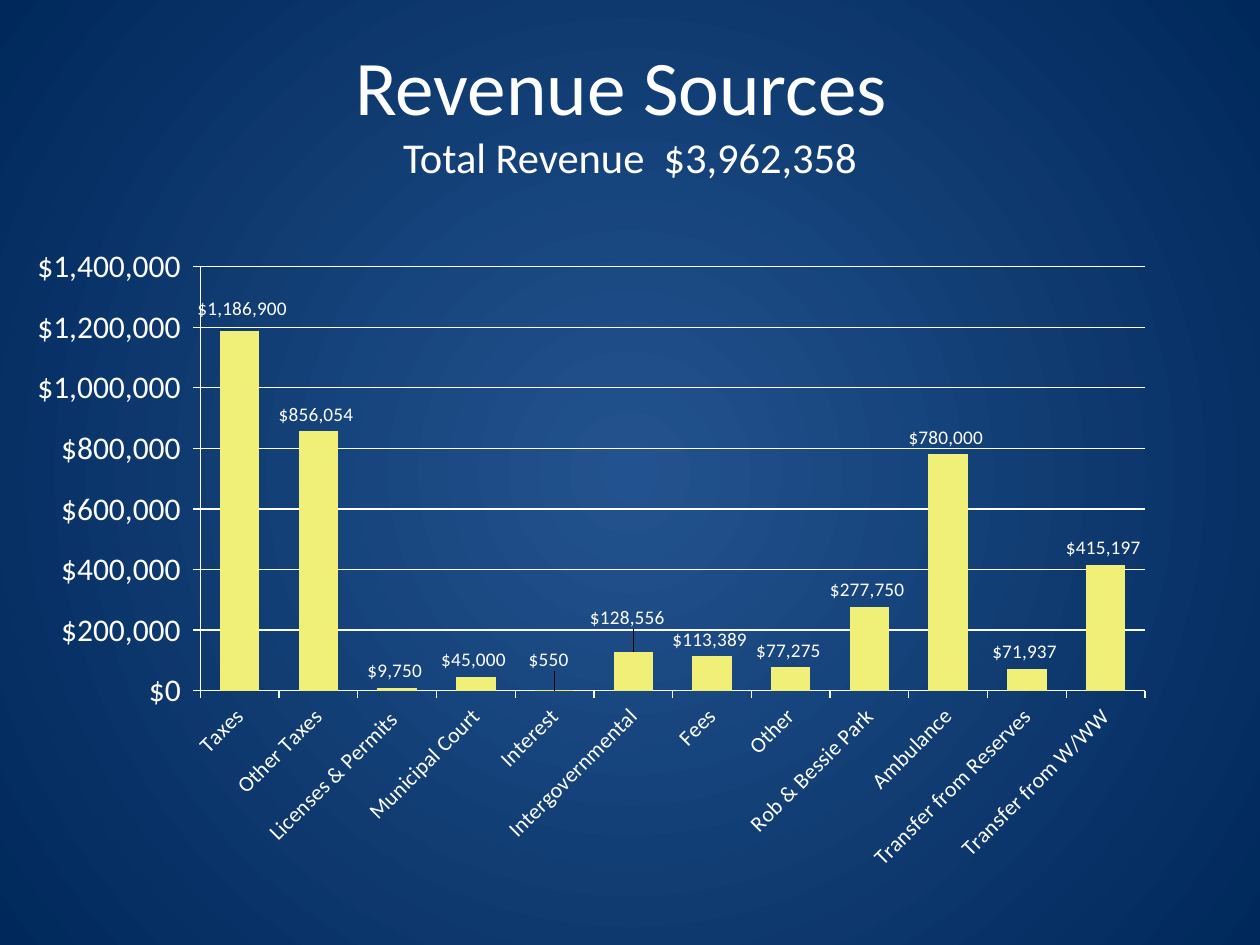
from lxml import etree
from pptx import Presentation
from pptx.chart.data import CategoryChartData
from pptx.dml.color import RGBColor
from pptx.enum.chart import XL_CHART_TYPE, XL_LABEL_POSITION, XL_TICK_MARK
from pptx.enum.text import MSO_ANCHOR, PP_ALIGN
from pptx.oxml import parse_xml
from pptx.oxml.ns import nsdecls, qn
from pptx.util import Inches, Pt

COLUMNS = XL_CHART_TYPE.COLUMN_CLUSTERED
ABOVE = XL_LABEL_POSITION.OUTSIDE_END
TICK_OUT = XL_TICK_MARK.OUTSIDE
TICK_NONE = XL_TICK_MARK.NONE
MIDDLE = MSO_ANCHOR.MIDDLE
CENTER = PP_ALIGN.CENTER

WHITE = RGBColor(0xFF, 0xFF, 0xFF)
YELLOW = RGBColor(0xF0, 0xF0, 0x78)
GLOW_BLUE = RGBColor(0x23, 0x53, 0x8E)
DEEP_BLUE = RGBColor(0x00, 0x28, 0x5B)
FONT = "Calibri"
DOLLARS = '"$"#,##0_);[Red]\\("$"#,##0\\)'

HEADING = [("Revenue Sources ", 44.1), ("Total Revenue  $3,962,358", 24.3)]
REVENUE = [
    ("Taxes", 1186900),
    ("Other Taxes", 856054),
    ("Licenses & Permits ", 9750),
    ("Municipal Court", 45000),
    ("Interest", 550),
    ("Intergovernmental", 128556),
    ("Fees", 113389),
    ("Other", 77275),
    ("Rob & Bessie Park", 277750),
    ("Ambulance", 780000),
    ("Transfer from Reserves", 71937),
    ("Transfer from W/WW", 415197),
]
# Labels moved off their bar, as fractions of the chart: index -> (x, y)
LABEL_SHIFTS = {0: (0.004, -0.008), 4: (-0.003, -0.021), 5: (-0.003, -0.026)}
PLOT_AREA = {"x": 0.161, "y": 0.071, "w": 0.769, "h": 0.651}


def style_font(font, size):
    font.name = FONT
    font.size = Pt(size)
    font.bold = False
    font.color.rgb = WHITE


def manual_layout(fractions, inner=False):
    layout = parse_xml(f"<c:layout {nsdecls('c')}><c:manualLayout/></c:layout>")
    settings = dict(fractions)
    if inner:
        settings = {"layoutTarget": "inner", "xMode": "edge", "yMode": "edge", **settings}
    for name, value in settings.items():
        etree.SubElement(layout[0], qn(f"c:{name}")).set("val", str(value))
    return layout


def paint_background(page):
    """Radial gradient, light in the centre."""
    fill = page.background.fill
    fill.gradient()
    for stop, color, position in zip(fill.gradient_stops, (GLOW_BLUE, DEEP_BLUE), (0, 1)):
        stop.color.rgb = color
        stop.position = position
    linear = next(page.background._cSld.iter(qn("a:lin")))
    radial = parse_xml(
        f'<a:path {nsdecls("a")} path="circle">'
        '<a:fillToRect l="50000" t="50000" r="50000" b="50000"/></a:path>'
    )
    linear.getparent().replace(linear, radial)


def add_heading(page):
    box = page.shapes.add_textbox(Inches(0.5), Inches(0.25), Inches(9), Inches(1.25))
    frame = box.text_frame
    frame.word_wrap = True
    frame.vertical_anchor = MIDDLE
    para = frame.paragraphs[0]
    para.alignment = CENTER
    for index, (text, size) in enumerate(HEADING):
        if index:
            para.add_line_break()
        span = para.add_run()
        span.text = text
        style_font(span.font, size)


def style_axes(chart):
    values, categories = chart.value_axis, chart.category_axis
    for axis, size in ((values, 18), (categories, 12.5)):
        style_font(axis.tick_labels.font, size)
        axis.major_tick_mark = TICK_OUT
        axis.minor_tick_mark = TICK_NONE
        axis.format.line.color.rgb = WHITE
        axis.format.line.width = Pt(0.75)
    values.minimum_scale, values.maximum_scale = 0, 1400000
    values.major_unit = 200000
    values.tick_labels.number_format = DOLLARS
    values.tick_labels.number_format_is_linked = False
    values.has_major_gridlines = True
    values.major_gridlines.format.line.color.rgb = WHITE
    values.major_gridlines.format.line.width = Pt(0.75)
    slant = categories._element.find(qn("c:txPr")).find(qn("a:bodyPr"))
    slant.set("rot", "-2700000")
    slant.set("vert", "horz")


def style_labels(series):
    labels = series.data_labels
    labels.show_value = True
    labels.number_format = DOLLARS
    labels.number_format_is_linked = False
    labels.position = ABOVE
    style_font(labels.font, 11)
    for index, (x, y) in LABEL_SHIFTS.items():
        label = series.points[index].data_label
        style_font(label.font, 11)
        label.position = ABOVE
        entry = labels._element.findall(qn("c:dLbl"))[-1]
        number_format = etree.Element(qn("c:numFmt"), formatCode=DOLLARS, sourceLinked="0")
        entry.insert(1, manual_layout({"x": x, "y": y}))
        entry.insert(2, number_format)


def add_revenue_chart(page):
    data = CategoryChartData(number_format=DOLLARS)
    data.categories = [name for name, _ in REVENUE]
    data.add_series("Series 1", [amount for _, amount in REVENUE])
    chart = page.shapes.add_chart(
        COLUMNS, Inches(0.02), Inches(1.75), Inches(9.75), Inches(5.17), data
    ).chart
    chart.has_legend = False
    chart.has_title = False
    style_font(chart.font, 18)
    style_axes(chart)
    plot = chart.plots[0]
    plot.gap_width = 100
    plot.vary_by_categories = False
    series = plot.series[0]
    series.format.fill.solid()
    series.format.fill.fore_color.rgb = YELLOW
    style_labels(series)
    area = chart._chartSpace.chart.plotArea
    for layout in area.findall(qn("c:layout")):
        area.remove(layout)
    area.insert(0, manual_layout(PLOT_AREA, inner=True))


def main():
    deck = Presentation()
    deck.slide_width, deck.slide_height = Inches(10), Inches(7.5)
    page = deck.slides.add_slide(deck.slide_layouts[6])
    paint_background(page)
    add_heading(page)
    add_revenue_chart(page)
    deck.save("out.pptx")


if __name__ == "__main__":
    main()
